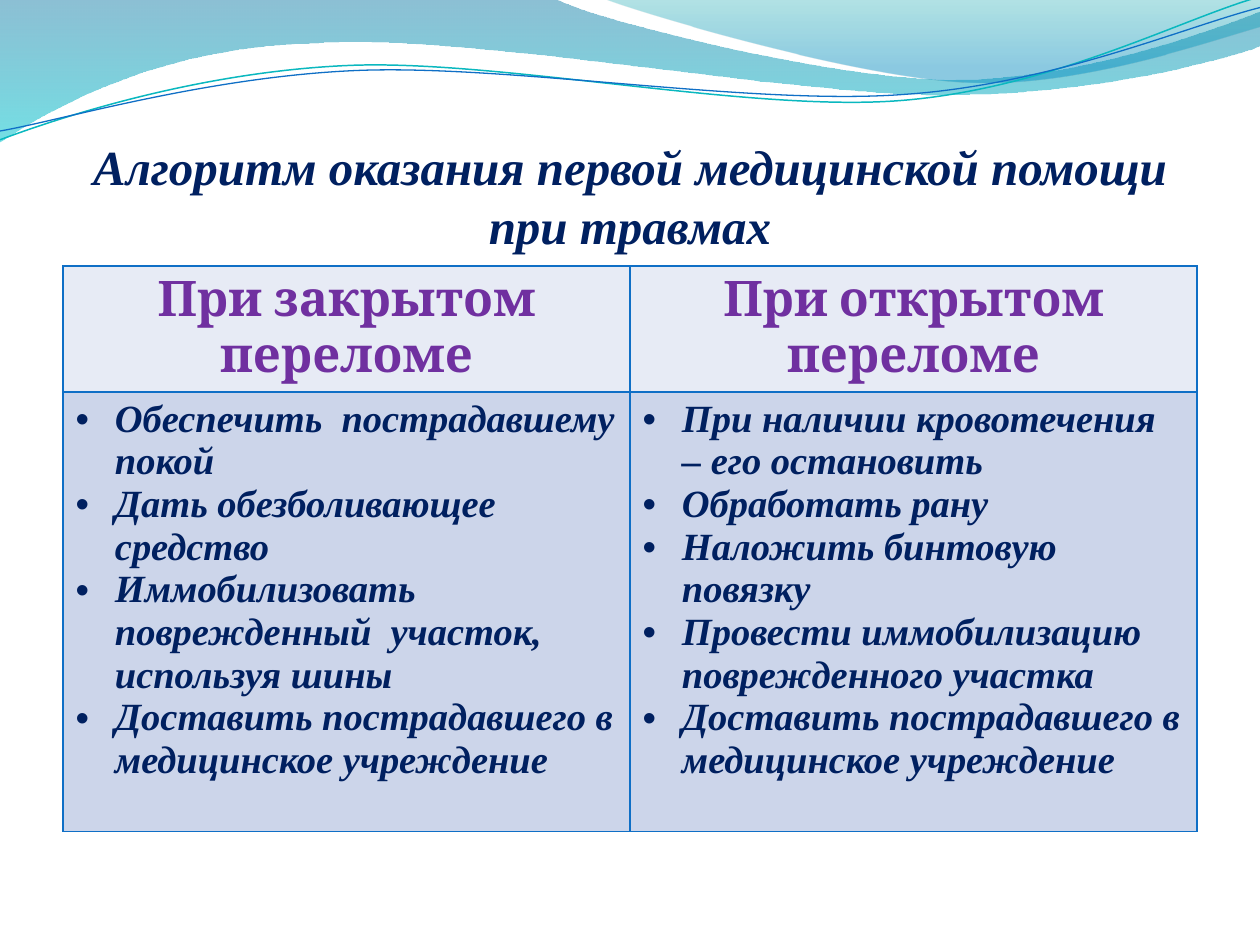
import pptx
import pptx.util
import pptx.dml.color
import pptx.enum.text
import pptx.oxml
from pptx.oxml.ns import qn

W, H = 10, 7.5
MARGIN = 0.05 * W
NAVY, PURPLE, BLUE, TEAL = "002060", "7030A0", "0F6FC6", "0AB8BF"
SERIF, HEAD_FONT = "Times New Roman", "Cambria"

TITLE = "Алгоритм оказания первой медицинской помощи при травмах"
COLUMNS = {
    "При закрытом переломе": [
        "Обеспечить  пострадавшему покой",
        "Дать обезболивающее средство",
        "Иммобилизовать поврежденный  участок, используя шины",
        "Доставить пострадавшего в медицинское учреждение",
    ],
    "При открытом переломе": [
        "При наличии кровотечения – его остановить",
        "Обработать рану",
        "Наложить бинтовую повязку",
        "Провести иммобилизацию поврежденного участка",
        "Доставить пострадавшего в медицинское учреждение",
    ],
}
TABLE_TOP, ROW_HEIGHTS, ROW_FILLS = 2.11, (1, 3.49), ("E7EBF5", "CCD5EA")

# A point is a line's end (2 numbers) or a cubic curve's two handles and end (6).
# Gradient stops: position, colour, opacity in percent.
WAVES = [
    ([(0, 0), (4.4, -0.01), (4.76, 0.17, 6.64, 0.63, 7.58, 0.63),
      (8.53, 0.63, 9.58, 0.26, 10, 0.09), (10.01, 0.36),
      (9.83, 0.44, 8.7, 0.76, 7.46, 0.75), (6.22, 0.75, 3.82, 0.28, 2.57, 0.34),
      (1.29, 0.36, 0.46, 0.83, -0.01, 1.13)],
     [(0, "0074A1", 45), (1, "00C6CF", 55)]),
    ([(4.79, -0.01), (5.09, 0.11, 6.82, 0.62, 7.69, 0.65),
      (8.56, 0.69, 9.61, 0.32, 10, 0.21), (10, 0)],
     [(0, "00A1A9", 30), (0.8, "008BBF", 45)]),
]
STRANDS = [
    ([(0, 1.11), (0.48, 0.93, 1.58, 0.57, 2.77, 0.52),
      (3.95, 0.47, 5.93, 0.89, 7.13, 0.8), (8.33, 0.71, 9.38, 0.15, 9.98, -0.02)],
     TEAL, 0.85),
    ([(0, 1.04), (0.47, 0.96, 1.64, 0.61, 2.83, 0.56),
      (4.03, 0.51, 5.97, 0.84, 7.17, 0.75), (8.36, 0.67, 9.41, 0.21, 10, 0.06)],
     BLUE, 0.75),
]


def rgb(value):
    return pptx.dml.color.RGBColor.from_string(value)


def add_curve(s, points, close):
    """Build a freeform through the end points, then bend its curved segments."""
    points = [[pptx.util.Inches(v) for v in point] for point in points]
    start, *rest = points
    builder = s.shapes.build_freeform(*start)
    builder.add_line_segments([point[-2:] for point in rest], close=close)
    sp = builder.convert_to_shape()
    sp.shadow.inherit = False
    for segment, point in zip(list(sp._element.iter(qn("a:lnTo"))), rest):
        if len(point) == 6:
            curve = segment.makeelement(qn("a:cubicBezTo"), {})
            for x, y in zip(point[::2], point[1::2]):
                place = {"x": str(x - sp.left), "y": str(y - sp.top)}
                curve.append(curve.makeelement(qn("a:pt"), place))
            segment.getparent().replace(segment, curve)
    return sp


def add_wave(s, points, stops):
    sp = add_curve(s, points, True)
    sp.line.fill.background()
    sp.fill.gradient()
    sp.fill.gradient_angle = 270
    for stop, (position, colour, _) in zip(sp.fill.gradient_stops, stops):
        stop.position = position
        stop.color.rgb = rgb(colour)
    for clr, (_, _, opacity) in zip(sp._element.spPr.iter(qn("a:srgbClr")), stops):
        clr.append(clr.makeelement(qn("a:alpha"), {"val": str(opacity * 1000)}))


def add_strand(s, points, colour, width):
    sp = add_curve(s, points, False)
    sp.fill.background()
    sp.line.color.rgb = rgb(colour)
    sp.line.width = pptx.util.Pt(width)


def write(p, text, size, font, colour, italic=False, align="LEFT", bullet=None):
    p.alignment = getattr(pptx.enum.text.PP_ALIGN, align)
    r = p.add_run()
    r.text = text
    r.font.size, r.font.name = pptx.util.Pt(size), font
    r.font.bold, r.font.italic = True, italic
    r.font.color.rgb = rgb(colour)
    if bullet:
        indent = pptx.util.Pt(22.5)
        pPr = p._p.get_or_add_pPr()
        pPr.set("marL", str(indent))
        pPr.set("indent", str(-indent))
        pPr.append(pPr.makeelement(qn("a:buFont"), {"typeface": "Arial"}))
        pPr.append(pPr.makeelement(qn("a:buChar"), {"char": bullet}))


def style_cell(cell, fill):
    tcPr = cell._tc.get_or_add_tcPr()
    for side in ("lnL", "lnR", "lnT", "lnB"):
        tcPr.append(pptx.oxml.parse_xml(
            f'<a:{side} xmlns:a="http://schemas.openxmlformats.org/drawingml/2006/main"'
            f' w="12700"><a:solidFill><a:srgbClr val="{BLUE}"/></a:solidFill></a:{side}>'))
    cell.fill.solid()
    cell.fill.fore_color.rgb = rgb(fill)


def add_title(s):
    box = [pptx.util.Inches(v) for v in (MARGIN, 0.77, W - 2 * MARGIN, 1.25)]
    tf = s.shapes.add_textbox(*box).text_frame
    tf.word_wrap = True
    tf.margin_left = tf.margin_right = tf.margin_bottom = 0
    tf.vertical_anchor = pptx.enum.text.MSO_ANCHOR.BOTTOM
    write(tf.paragraphs[0], TITLE, 28, SERIF, NAVY, italic=True, align="CENTER")


def add_comparison(s):
    box = [pptx.util.Inches(v)
           for v in (MARGIN, TABLE_TOP, W - 2 * MARGIN, sum(ROW_HEIGHTS))]
    table = s.shapes.add_table(len(ROW_HEIGHTS), len(COLUMNS), *box).table
    for row, height in zip(table.rows, ROW_HEIGHTS):
        row.height = pptx.util.Inches(height)
    for col, (heading, steps) in enumerate(COLUMNS.items()):
        head, body = table.cell(0, col), table.cell(1, col)
        for cell, fill in zip((head, body), ROW_FILLS):
            style_cell(cell, fill)
        head.margin_bottom = 0
        write(head.text_frame.paragraphs[0], heading, 28, HEAD_FONT, PURPLE,
              align="CENTER")
        tf = body.text_frame
        for i, step in enumerate(steps):
            p = tf.add_paragraph() if i else tf.paragraphs[0]
            write(p, step, 22, SERIF, NAVY, italic=True, bullet="•")


def main():
    prs = pptx.Presentation()
    prs.slide_width, prs.slide_height = pptx.util.Inches(W), pptx.util.Inches(H)
    s = prs.slides.add_slide(prs.slide_layouts[6])
    for points, stops in WAVES:
        add_wave(s, points, stops)
    for points, colour, width in STRANDS:
        add_strand(s, points, colour, width)
    add_title(s)
    add_comparison(s)
    prs.save("out.pptx")


if __name__ == "__main__":
    main()
